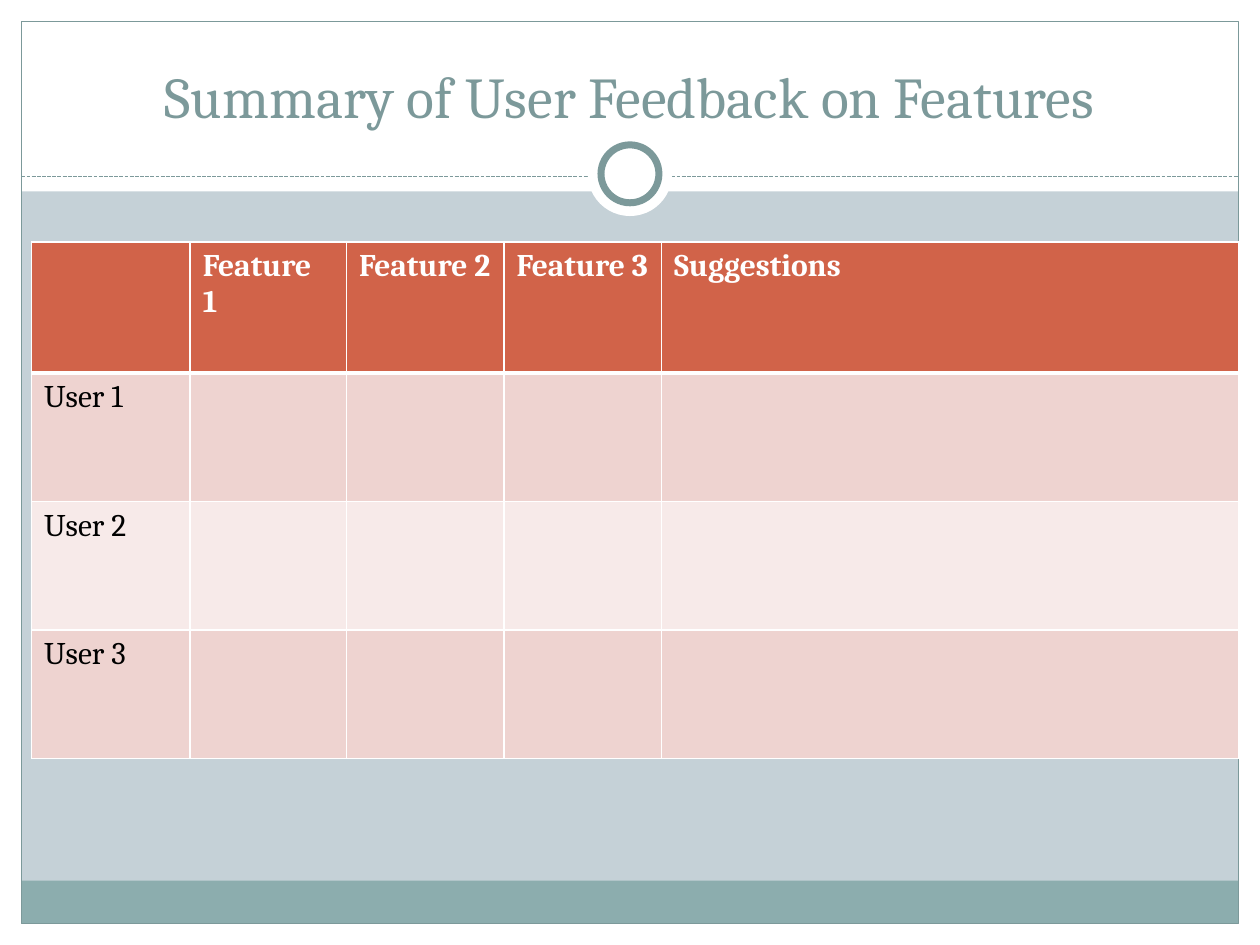
from lxml.etree import SubElement
from pptx import Presentation
from pptx.dml.color import RGBColor
from pptx.enum.dml import MSO_LINE_DASH_STYLE as DASH
from pptx.enum.shapes import MSO_CONNECTOR, MSO_SHAPE
from pptx.enum.text import MSO_ANCHOR, MSO_AUTO_SIZE, PP_ALIGN
from pptx.oxml.ns import qn
from pptx.util import Inches, Pt

WHITE = RGBColor(0xFF, 0xFF, 0xFF)
BLACK = RGBColor(0, 0, 0)
BACKDROP = RGBColor(0xC5, 0xD1, 0xD7)
TEAL = RGBColor(0x7C, 0x99, 0x9A)
FOOTER = RGBColor(0x8C, 0xAD, 0xAE)
HEADER = RGBColor(0xD1, 0x63, 0x49)
BANDS = (RGBColor(0xEE, 0xD3, 0xD0), RGBColor(0xF7, 0xEA, 0xE9))

W, H, MARGIN = 10, 7.5, 0.17
RULE_Y, BAND_H, FOOTER_H = 1.4, 1.52, 0.34
RING_Y = 1.38
COLS = (1.26, 1.24, 1.25, 1.25, 4.58)
ROWS = (1.04, 1.02, 1.02, 1.02)
HEADINGS = ("", "Feature  1", "Feature 2", "Feature 3", "Suggestions")
USERS = ("User 1", "User 2", "User 3")

TITLE_FONT = {"name": "Cambria", "size": Pt(33), "bold": False}
HEAD_FONT = {"name": "Cambria", "size": Pt(18), "bold": True}
BODY_FONT = {**HEAD_FONT, "bold": False}


def set_font(font, values, color):
    for name, value in values.items():
        setattr(font, name, value)
    font.color.rgb = color


def add_panel(s, box, fill=None, line=None, width=0.75, kind=MSO_SHAPE.RECTANGLE):
    sp = s.shapes.add_shape(kind, *map(Inches, box))
    sp.shadow.inherit = False
    if fill is None:
        sp.fill.background()
    else:
        sp.fill.solid()
        sp.fill.fore_color.rgb = fill
    if line is None:
        sp.line.fill.background()
    else:
        sp.line.color.rgb = line
        sp.line.width = Pt(width)


def add_disc(s, size, line=None, width=0):
    box = ((W - size) / 2, RING_Y - size / 2, size, size)
    add_panel(s, box, WHITE, line, width, MSO_SHAPE.OVAL)


def add_rule(s):
    ends = map(Inches, (MARGIN, RULE_Y, W - MARGIN, RULE_Y))
    line = s.shapes.add_connector(MSO_CONNECTOR.STRAIGHT, *ends)
    line.line.color.rgb = TEAL
    line.line.width = Pt(0.75)
    line.line.dash_style = DASH.SQUARE_DOT
    SubElement(line._element.spPr, qn("a:effectLst"))


def add_frame(s):
    inner_w, inner_h = W - 2 * MARGIN, H - 2 * MARGIN
    for box in (
        (0, H - MARGIN, W, MARGIN),
        (0, 0, W, BAND_H),
        (0, 0, MARGIN, H),
        (W - MARGIN, 0, MARGIN, H),
    ):
        add_panel(s, box, WHITE)
    add_panel(s, (MARGIN, H - MARGIN - FOOTER_H, inner_w, FOOTER_H), FOOTER)
    add_panel(s, (MARGIN, MARGIN, inner_w, inner_h), line=TEAL)
    add_rule(s)
    add_disc(s, 0.67)
    add_disc(s, 0.46, TEAL, 4)


def place_title(s, text):
    sp = s.shapes.title
    s.shapes._spTree.append(sp._element)
    sp.left, sp.top, sp.width, sp.height = map(Inches, (0.33, 0.25, 9.33, 0.83))
    tf = sp.text_frame
    tf.text = text
    tf.word_wrap = True
    tf.auto_size = MSO_AUTO_SIZE.NONE
    tf.vertical_anchor = MSO_ANCHOR.BOTTOM
    p = tf.paragraphs[0]
    p.alignment = PP_ALIGN.CENTER
    set_font(p.runs[0].font, TITLE_FONT, TEAL)


def set_borders(cell, **widths):
    tcPr = cell._tc.get_or_add_tcPr()
    for side in "LRTB":
        ln = SubElement(tcPr, qn(f"a:ln{side}"), w=str(Pt(widths.get(side, 1))))
        fill = SubElement(ln, qn("a:solidFill"))
        SubElement(fill, qn("a:srgbClr"), val=str(WHITE))


def fill_cell(cell, text, row):
    set_borders(cell, T=3 if row == 1 else 1, B=3 if row == 0 else 1)
    cell.fill.solid()
    cell.fill.fore_color.rgb = BANDS[(row - 1) % 2] if row else HEADER
    cell.text = text
    font = cell.text_frame.paragraphs[0].font
    set_font(font, BODY_FONT if row else HEAD_FONT, BLACK if row else WHITE)
    for r in cell.text_frame.paragraphs[0].runs:
        set_font(r.font, BODY_FONT if row else HEAD_FONT, BLACK if row else WHITE)


def add_feedback_table(s):
    box = map(Inches, (0.25, 1.92, sum(COLS), sum(ROWS)))
    table = s.shapes.add_table(len(ROWS), len(COLS), *box).table
    for column, width in zip(table.columns, COLS):
        column.width = Inches(width)
    for row, height in zip(table.rows, ROWS):
        row.height = Inches(height)
    blanks = ("",) * (len(COLS) - 1)
    content = [HEADINGS] + [(user, *blanks) for user in USERS]
    for i, texts in enumerate(content):
        for j, text in enumerate(texts):
            fill_cell(table.cell(i, j), text, i)


def main():
    prs = Presentation()
    prs.slide_width, prs.slide_height = Inches(W), Inches(H)
    s = prs.slides.add_slide(prs.slide_layouts[5])
    s.background.fill.solid()
    s.background.fill.fore_color.rgb = BACKDROP
    add_frame(s)
    place_title(s, "Summary of User Feedback on Features")
    add_feedback_table(s)
    prs.save("out.pptx")


if __name__ == "__main__":
    main()
